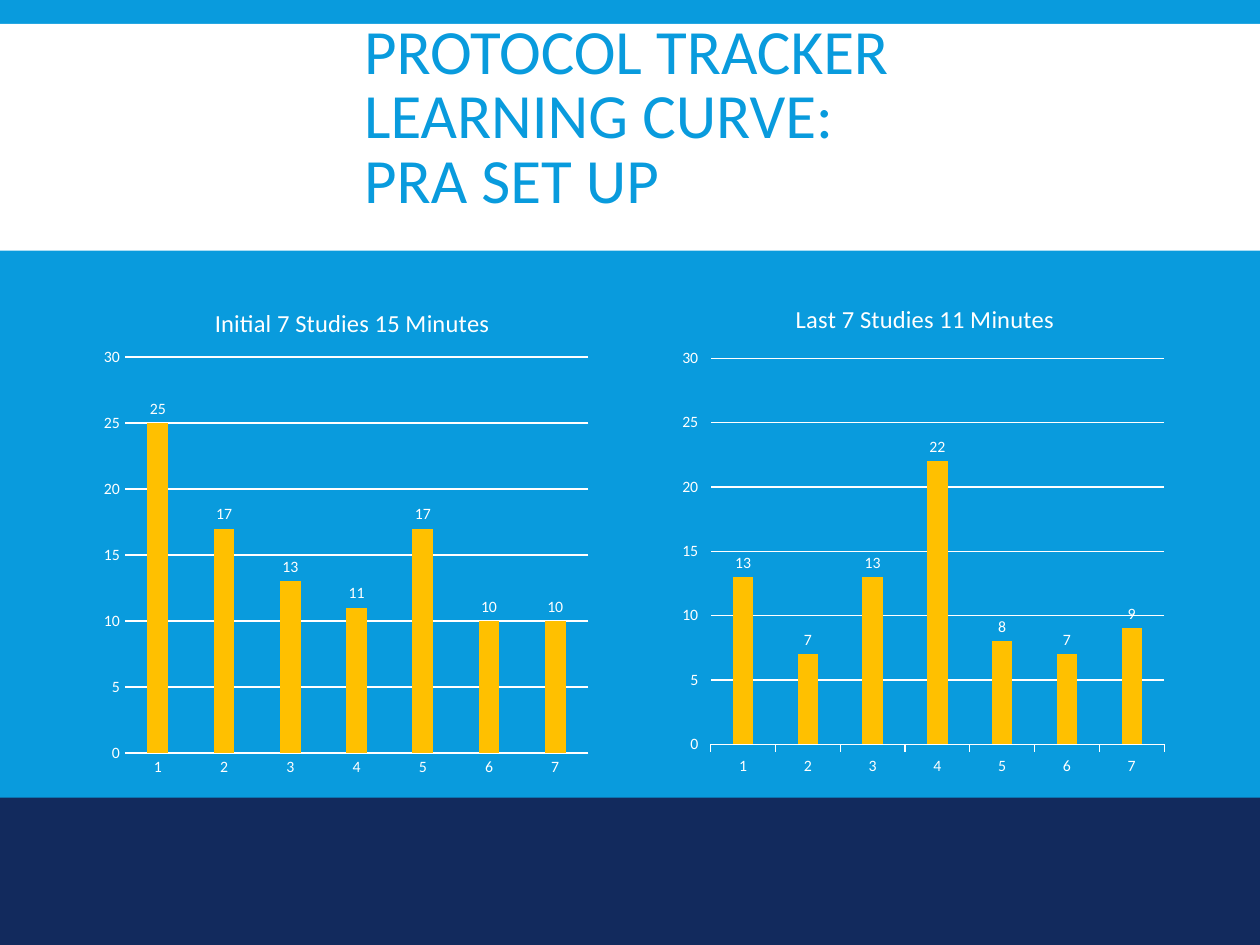
from dataclasses import dataclass

from lxml import etree
from pptx import Presentation
from pptx.chart.data import CategoryChartData
from pptx.dml.color import RGBColor
from pptx.enum import chart as charts, shapes, text
from pptx.oxml.ns import qn
from pptx.util import Inches, Pt


@dataclass(frozen=True)
class Theme:
    """Colours, font and type sizes of the slide."""
    blue: str = "099BDD"
    navy: str = "122A5D"
    white: str = "FFFFFF"
    gold: str = "FFC000"
    font: str = "Calibri"
    heading: int = 36
    chart_title: int = 14
    chart: int = 10
    label: int = 9


THEME = Theme()


def rgb(color):
    """Turn a hex string into a colour."""
    return RGBColor.from_string(color)


def style_font(font, size, color=THEME.white):
    """Apply the theme font with a size and colour."""
    font.name = THEME.font
    font.size = Pt(size)
    font.bold = False
    font.color.rgb = rgb(color)


def write_text(frame, content, *, size, color, line_spacing=None):
    """Write one paragraph into a text frame with its format."""
    paragraph = frame.paragraphs[0]
    paragraph.text = content
    if line_spacing:
        paragraph.line_spacing = line_spacing
    style_font(paragraph.font, size, color)
    for run in paragraph.runs:
        style_font(run.font, size, color)


def add_band(slide, top, height, color):
    """Add a full-width colour band."""
    band = slide.shapes.add_shape(
        shapes.MSO_SHAPE.RECTANGLE, 0, Inches(top), Inches(10), Inches(height))
    band.shadow.inherit = False
    band.fill.solid()
    band.fill.fore_color.rgb = rgb(color)
    band.line.fill.background()


def add_heading(slide, content):
    """Add the slide heading, inset from the left of its box."""
    heading = slide.shapes.add_textbox(
        Inches(0.75), Inches(-0.11), Inches(8.5), Inches(2.12))
    frame = heading.text_frame
    frame.word_wrap = True
    frame.margin_left = Inches(2.14)
    frame.vertical_anchor = text.MSO_ANCHOR.MIDDLE
    write_text(frame, content, size=THEME.heading, color=THEME.blue, line_spacing=0.85)


def set_layout(parent, index, **places):
    """Give a chart part a manual layout, in fractions of the chart."""
    for old in parent.findall(qn("c:layout")):
        parent.remove(old)
    layout = etree.Element(qn("c:layout"))
    parent.insert(index, layout)
    manual = etree.SubElement(layout, qn("c:manualLayout"))
    modes = {"xMode": "edge", "yMode": "edge"}
    if "w" in places:
        modes = {"layoutTarget": "inner", **modes}
    for tag, value in {**modes, **places}.items():
        etree.SubElement(manual, qn(f"c:{tag}")).set("val", str(value))


def style_axis(axis, tick):
    """Set the tick marks and label font of an axis."""
    axis.major_tick_mark = tick
    axis.minor_tick_mark = charts.XL_TICK_MARK.NONE
    style_font(axis.tick_labels.font, THEME.label)


def style_line(line):
    """Make a thin white chart line."""
    line.color.rgb = rgb(THEME.white)
    line.width = Pt(0.75)


def add_minutes_chart(slide, left, top, title, minutes, tick, title_x, plot):
    """Add a column chart of the minutes taken per study."""
    data = CategoryChartData()
    data.categories = [str(study) for study in range(1, len(minutes) + 1)]
    data.add_series("Series 1", minutes)
    chart = slide.shapes.add_chart(
        charts.XL_CHART_TYPE.COLUMN_CLUSTERED, Inches(left), Inches(top),
        Inches(4), Inches(4.03), data).chart
    style_font(chart.font, THEME.chart)
    chart.has_legend = False
    chart.has_title = True
    write_text(chart.chart_title.text_frame, title,
               size=THEME.chart_title, color=THEME.white)
    chart.chart_title.include_in_layout = False
    set_layout(chart.chart_title._element, 1, x=title_x, y=0.04)
    set_layout(chart._chartSpace.find(f".//{qn('c:plotArea')}"), 0, **plot)

    style_axis(chart.category_axis, tick)
    style_line(chart.category_axis.format.line)
    scale = chart.value_axis
    style_axis(scale, tick)
    scale.minimum_scale, scale.maximum_scale, scale.major_unit = 0, 30, 5
    scale.format.line.fill.background()
    style_line(scale.major_gridlines.format.line)

    columns = chart.plots[0]
    columns.gap_width = 219
    columns.overlap = -27
    columns.vary_by_categories = False
    series = columns.series[0]
    series.format.fill.solid()
    series.format.fill.fore_color.rgb = rgb(THEME.gold)
    labels = series.data_labels
    labels.show_value = True
    labels.position = charts.XL_LABEL_POSITION.OUTSIDE_END
    style_font(labels.font, THEME.label)


def main():
    """Build the slide and save it."""
    deck = Presentation()
    deck.slide_width, deck.slide_height = Inches(10), Inches(7.5)
    slide = deck.slides.add_slide(deck.slide_layouts[6])
    slide.background.fill.solid()
    slide.background.fill.fore_color.rgb = rgb(THEME.blue)
    add_band(slide, 0.19, 1.8, THEME.white)
    add_band(slide, 6.33, 1.17, THEME.navy)
    add_heading(slide, "PROTOCOL TRACKER\vLEARNING CURVE:\vPRA SET UP")
    add_minutes_chart(
        slide, 0.75, 2.23, "Initial 7 Studies 15 Minutes",
        (25, 17, 13, 11, 17, 10, 10), charts.XL_TICK_MARK.NONE, 0.23,
        {"x": 0.06, "y": 0.15, "w": 0.92, "h": 0.78})
    add_minutes_chart(
        slide, 5.32, 2.2, "Last 7 Studies 11 Minutes",
        (13, 7, 13, 22, 8, 7, 9), charts.XL_TICK_MARK.OUTSIDE, 0.24,
        {"x": 0.08, "y": 0.16, "w": 0.9, "h": 0.76})
    deck.save("out.pptx")


if __name__ == "__main__":
    main()
